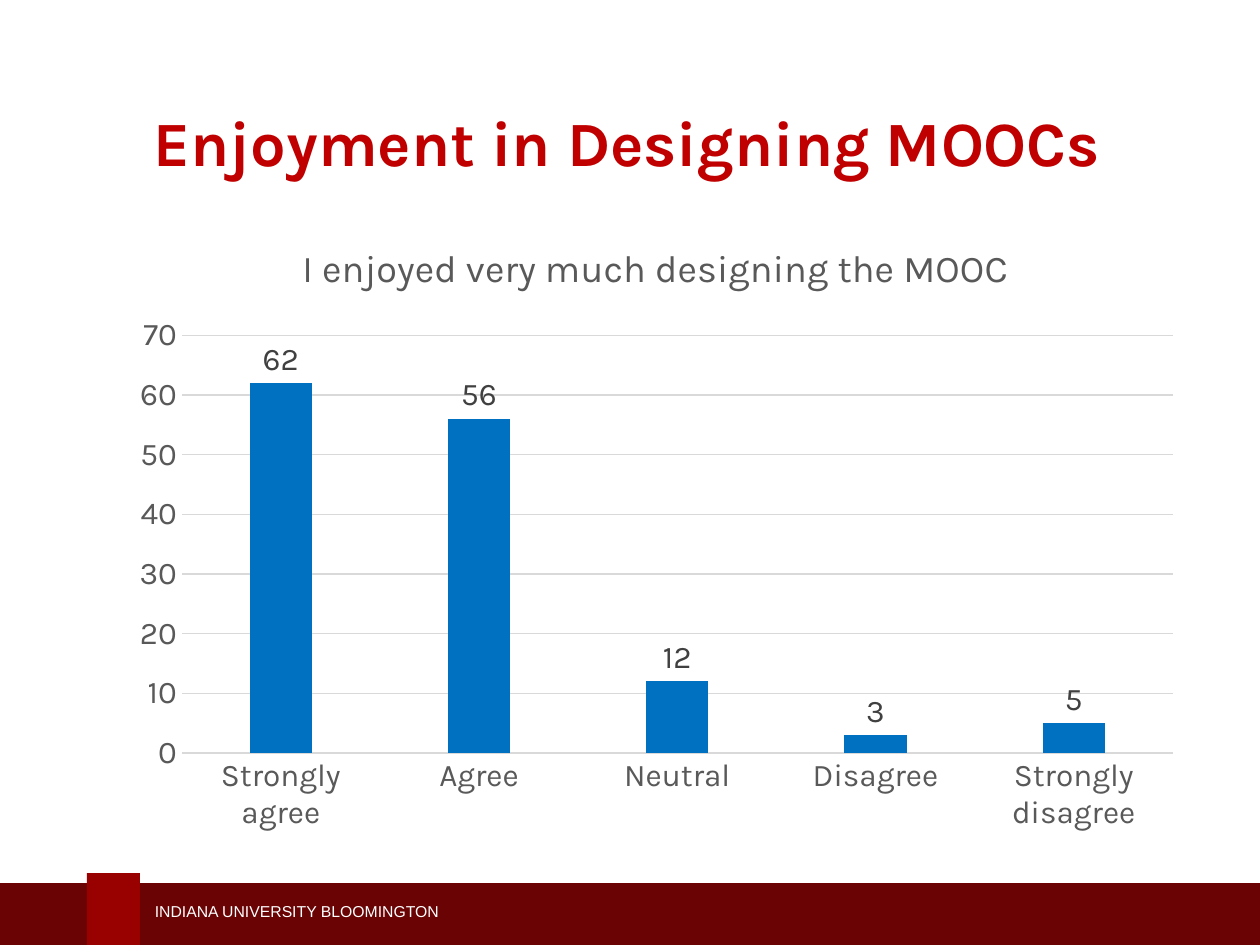
from lxml import etree
from pptx import Presentation
from pptx.chart.data import CategoryChartData
from pptx.dml.color import RGBColor
from pptx.enum.chart import XL_CHART_TYPE, XL_LABEL_POSITION, XL_TICK_MARK
from pptx.enum.shapes import MSO_SHAPE
from pptx.enum.text import MSO_ANCHOR, PP_ALIGN
from pptx.oxml.ns import qn
from pptx.util import Inches, Pt

COLUMN = XL_CHART_TYPE.COLUMN_CLUSTERED
OUTSIDE = XL_LABEL_POSITION.OUTSIDE_END
NO_TICK = XL_TICK_MARK.NONE
RECT = MSO_SHAPE.RECTANGLE
MIDDLE = MSO_ANCHOR.MIDDLE
CENTER, LEFT = PP_ALIGN.CENTER, PP_ALIGN.LEFT

MAROON = RGBColor(0x69, 0x03, 0x04)
CRIMSON = RGBColor(0x99, 0x00, 0x00)
RED = RGBColor(0xC0, 0x00, 0x00)
BLUE = RGBColor(0x00, 0x70, 0xC0)
WHITE = RGBColor(0xFF, 0xFF, 0xFF)
DARK = RGBColor(0x40, 0x40, 0x40)
GRAY = RGBColor(0x59, 0x59, 0x59)
PALE = RGBColor(0xD9, 0xD9, 0xD9)

ANSWERS = {"Strongly agree": 62, "Agree": 56, "Neutral": 12,
           "Disagree": 3, "Strongly disagree": 5}


def style(font, size, color, name="Karla", bold=False):
    font.name, font.size, font.bold = name, Pt(size), bold
    font.color.rgb = color


def add_band(slide, box, color):
    band = slide.shapes.add_shape(RECT, *map(Inches, box))
    band.shadow.inherit = False
    band.fill.solid()
    band.fill.fore_color.rgb = color
    band.line.fill.background()


def set_text(shape, text, align):
    frame = shape.text_frame
    frame.word_wrap = True
    frame.vertical_anchor = MIDDLE
    para = frame.paragraphs[0]
    para.text = text
    para.alignment = align
    return para.font


def set_line(line, color):
    line.color.rgb = color
    line.width = Pt(0.75)


def place_plot(chart, **parts):
    """Fix the inner plot area, in fractions of the chart."""
    plot = chart.plots[0]._element.getparent()
    old = plot.find(qn("c:layout"))
    if old is not None:
        plot.remove(old)
    layout = etree.Element(qn("c:layout"))
    plot.insert(0, layout)
    manual = etree.SubElement(layout, qn("c:manualLayout"))
    modes = {"layoutTarget": "inner", "xMode": "edge", "yMode": "edge"}
    for tag, val in {**modes, **parts}.items():
        etree.SubElement(manual, qn("c:" + tag)).set("val", str(val))


def add_bars(slide, box, title, answers):
    data = CategoryChartData()
    data.categories = list(answers)
    data.add_series("Series 1", list(answers.values()))
    chart = slide.shapes.add_chart(COLUMN, *map(Inches, box), data).chart
    style(chart.font, 18, GRAY)
    chart.has_legend = False
    chart.has_title = True
    para = chart.chart_title.text_frame.paragraphs[0]
    para.text = title
    style(para.font, 21.6, GRAY)
    chart.chart_title.include_in_layout = False

    # Axes
    cat, val = chart.category_axis, chart.value_axis
    for axis in (cat, val):
        axis.major_tick_mark = axis.minor_tick_mark = NO_TICK
        style(axis.tick_labels.font, 18, GRAY)
    set_line(cat.format.line, PALE)
    val.format.line.fill.background()
    set_line(val.major_gridlines.format.line, PALE)
    val.minimum_scale, val.maximum_scale, val.major_unit = 0, 70, 10

    # Bars and their values
    plot = chart.plots[0]
    plot.vary_by_categories = False
    plot.gap_width, plot.overlap = 219, -27
    bars = plot.series[0]
    bars.format.fill.solid()
    bars.format.fill.fore_color.rgb = BLUE
    labels = bars.data_labels
    labels.show_value = True
    labels.position = OUTSIDE
    style(labels.font, 18, DARK)
    place_plot(chart, x=0.06, y=0.19, w=0.92, h=0.67)


def main():
    deck = Presentation()
    deck.slide_width, deck.slide_height = Inches(10), Inches(7.5)
    slide = deck.slides.add_slide(deck.slide_layouts[5])

    # Footer
    add_band(slide, (-0.03, 7.01, 10.09, 0.5), MAROON)
    add_band(slide, (0.69, 6.93, 0.42, 0.58), CRIMSON)
    foot = slide.shapes.add_textbox(*map(Inches, (1.13, 7.11, 3.95, 0.25)))
    style(set_text(foot, "INDIANA UNIVERSITY BLOOMINGTON", LEFT),
          9, WHITE, "Arial")

    # Title
    title = slide.shapes.title
    title.left, title.top = Inches(0.6), Inches(0.77)
    title.width, title.height = Inches(8.75), Inches(0.7)
    style(set_text(title, "Enjoyment in Designing MOOCs", CENTER),
          36, RED, bold=True)

    # Survey chart
    add_bars(slide, (0.93, 1.72, 8.55, 4.95),
             "I enjoyed very much designing the MOOC", ANSWERS)
    deck.save("out.pptx")


if __name__ == "__main__":
    main()
